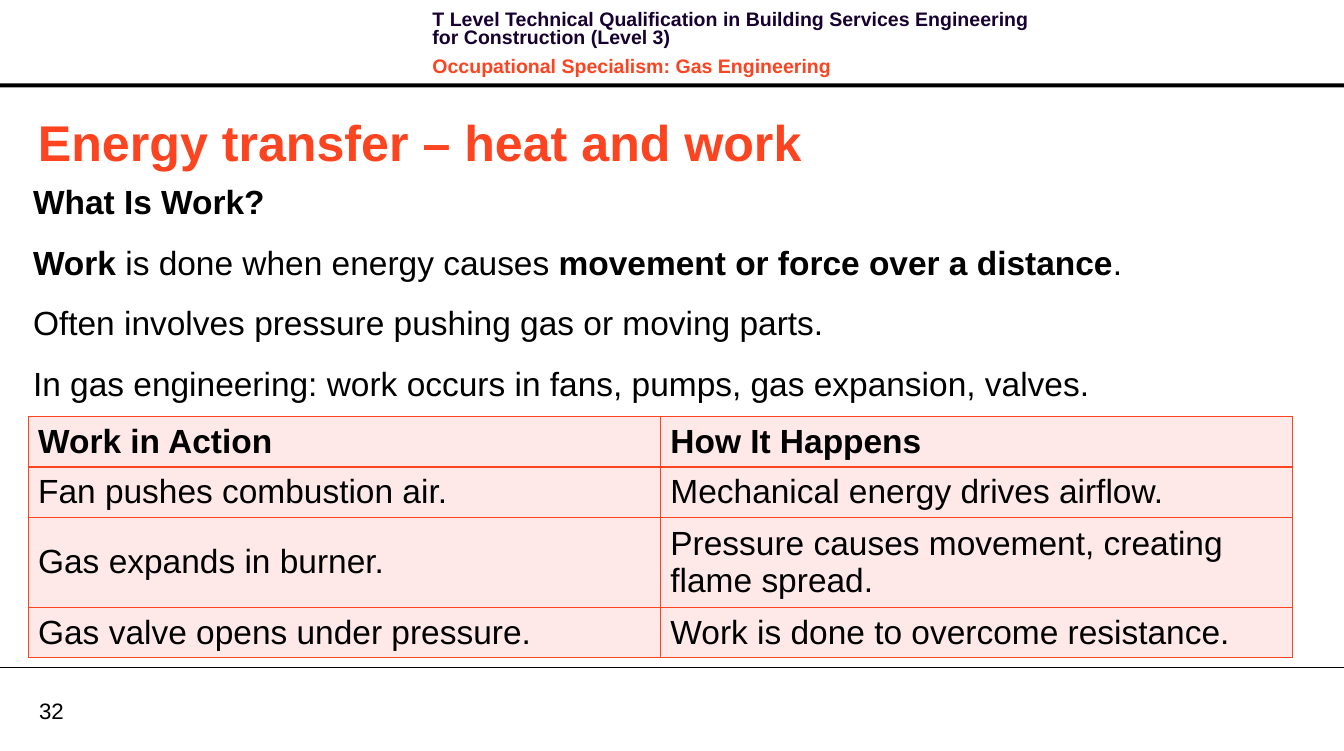
from lxml.etree import SubElement
from pptx import Presentation
from pptx.dml.color import RGBColor
from pptx.enum.shapes import MSO_CONNECTOR as Connector, MSO_SHAPE as Shape
from pptx.enum.text import MSO_ANCHOR as Anchor
from pptx.oxml.ns import qn
from pptx.util import Inches, Pt

BLACK, ORANGE, NAVY, PINK = "000000", "FC4421", "170130", "FEE9E8"


def rgb(hex_code):
    return RGBColor.from_string(hex_code)


class Deck:
    """Places elements on a grid of 100 columns by 100 rows."""
    font = "Arial"
    border_width = Pt(1)

    def __init__(self, width, height):
        self.prs = Presentation()
        self.prs.slide_width, self.prs.slide_height = Inches(width), Inches(height)
        self.slide = self.prs.slides.add_slide(self.prs.slide_layouts[6])
        self.shapes = self.slide.shapes

    def x(self, columns):
        return round(self.prs.slide_width * columns / 100)

    def y(self, rows):
        return round(self.prs.slide_height * rows / 100)

    def box(self, left, top, width, height):
        return self.x(left), self.y(top), self.x(width), self.y(height)

    def add_runs(self, paragraph, text, size, color=BLACK, bold=False):
        """Add text whose parts between asterisks switch the weight."""
        for index, part in enumerate(text.split("*")):
            if part:
                run = paragraph.add_run()
                run.text = part
                run.font.name, run.font.size = self.font, Pt(size)
                run.font.bold = bold != bool(index % 2)
                run.font.color.rgb = rgb(color)

    def text(self, place, lines, size, bold=False, inset=(0, 0),
             anchor=Anchor.TOP, spacing=None, after=0):
        """Lines are pairs of text and colour."""
        frame = self.shapes.add_textbox(*self.box(*place)).text_frame
        frame.word_wrap = True
        frame.vertical_anchor = anchor
        frame.margin_left = frame.margin_right = Inches(inset[0])
        frame.margin_top = frame.margin_bottom = Inches(inset[1])
        for index, (line, color) in enumerate(lines):
            paragraph = frame.add_paragraph() if index else frame.paragraphs[0]
            paragraph.line_spacing = spacing
            paragraph.space_after = Pt(after)
            self.add_runs(paragraph, line, size, color, bold)

    def bar(self, place, color):
        bar = self.shapes.add_shape(Shape.RECTANGLE, *self.box(*place))
        bar.shadow.inherit = False
        bar.fill.solid()
        bar.fill.fore_color.rgb = rgb(color)
        bar.line.fill.background()

    def rule(self, row, color, weight):
        level = self.y(row)
        rule = self.shapes.add_connector(
            Connector.STRAIGHT, 0, level, self.x(100), level)
        rule.line.color.rgb = rgb(color)
        rule.line.width = Pt(weight)
        SubElement(rule.element.spPr, qn("a:effectLst"))

    def border(self, cell, color):
        properties = cell._tc.get_or_add_tcPr()
        for side in ("lnL", "lnR", "lnT", "lnB"):
            line = SubElement(properties, qn(f"a:{side}"), w=str(self.border_width))
            fill = SubElement(line, qn("a:solidFill"))
            SubElement(fill, qn("a:srgbClr"), val=color)

    def table(self, left, top, width, heights, rows, size):
        table = self.shapes.add_table(
            len(rows), len(rows[0]), *self.box(left, top, width, sum(heights))).table
        table.horz_banding = False
        for row, height in zip(table.rows, heights):
            row.height = self.y(height)
        for r, texts in enumerate(rows):
            for c, text in enumerate(texts):
                cell = table.cell(r, c)
                cell.vertical_anchor = Anchor.MIDDLE
                self.border(cell, ORANGE)
                cell.fill.solid()
                cell.fill.fore_color.rgb = rgb(PINK)
                self.add_runs(cell.text_frame.paragraphs[0], text, size, bold=r == 0)


def main():
    deck = Deck(13.39, 7.48)

    deck.bar((0, 11.1, 100, 0.53), BLACK)
    deck.text((2.91, 92.78, 4.78, 3.61), [("32", BLACK)], 16, anchor=Anchor.MIDDLE)
    deck.rule(88.9, BLACK, 0.75)

    qualification = ("T Level Technical Qualification in Building Services "
                     "Engineering for Construction (Level 3)")
    specialism = "Occupational Specialism: Gas Engineering"
    deck.text((31.44, 0.94, 47.57, 8.56),
              [(qualification, NAVY), (specialism, ORANGE)], 14, bold=True,
              inset=(0.1, 0.05), spacing=Pt(13.1), after=8)

    deck.text((2.09, 14.04, 95, 9.49), [("Energy transfer – heat and work", ORANGE)],
              36, bold=True, inset=(0.1, 0.05), anchor=Anchor.MIDDLE)

    explanation = [
        "*What Is Work?*",
        "*Work* is done when energy causes *movement or force over a distance*.",
        "Often involves pressure pushing gas or moving parts.",
        "In gas engineering: work occurs in fans, pumps, gas expansion, valves.",
    ]
    deck.text((2.46, 23.53, 95, 60.56), [(line, BLACK) for line in explanation],
              24, spacing=1.1, after=12)

    work_examples = [
        ("Work in Action", "How It Happens"),
        ("Fan pushes combustion air.", "Mechanical energy drives airflow."),
        ("Gas expands in burner.", "Pressure causes movement, creating flame spread."),
        ("Gas valve opens under pressure.", "Work is done to overcome resistance."),
    ]
    deck.table(2.09, 55.48, 94.1, (6.35, 6.35, 11.23, 6.35), work_examples, 24)

    deck.prs.save("out.pptx")


if __name__ == "__main__":
    main()
